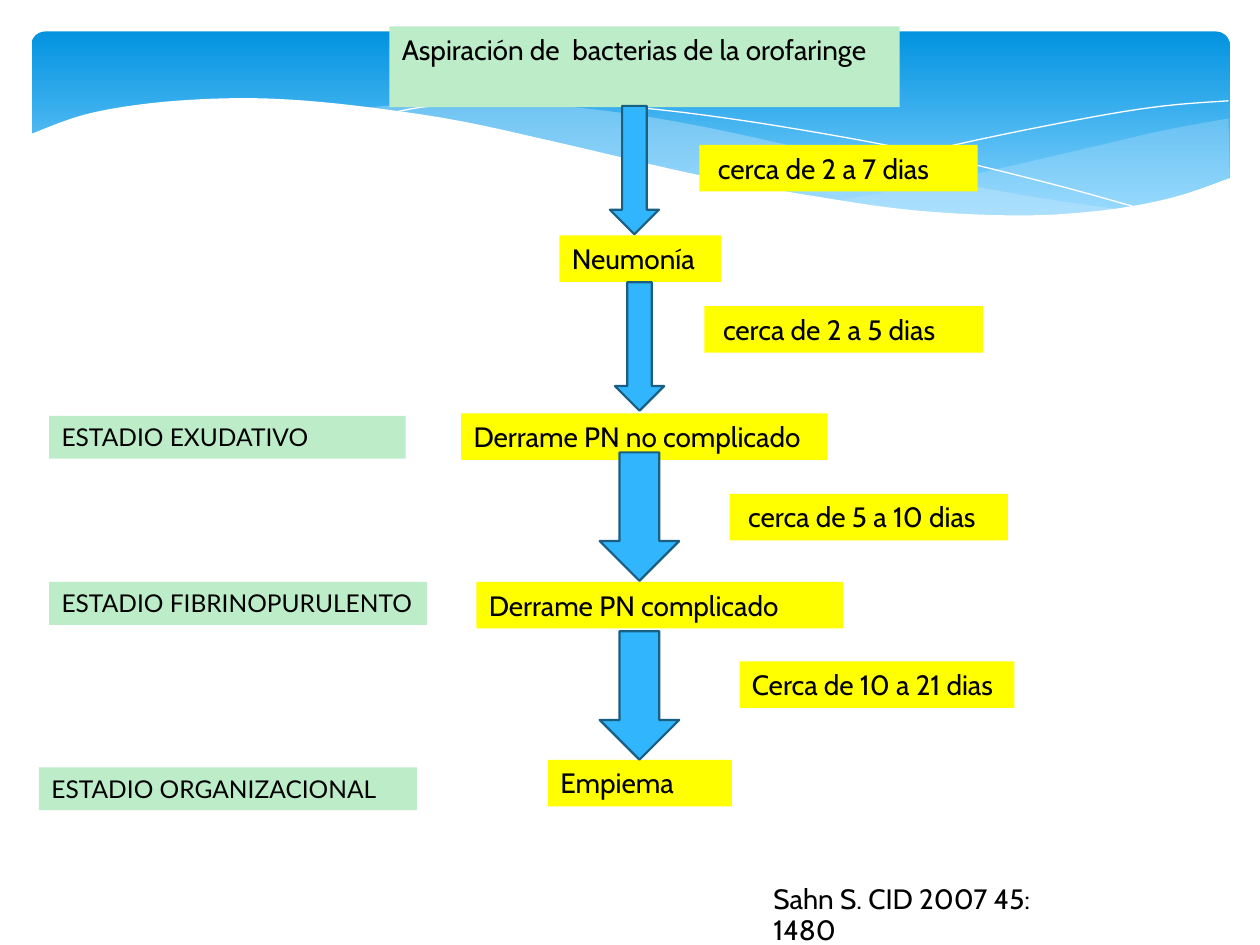
from dataclasses import dataclass

from lxml import etree
from pptx import Presentation
from pptx.dml.color import RGBColor
from pptx.enum.shapes import MSO_SHAPE
from pptx.enum.text import MSO_ANCHOR, PP_ALIGN
from pptx.oxml.ns import qn
from pptx.util import Pt

RECTANGLE = MSO_SHAPE.RECTANGLE
ROUNDED = MSO_SHAPE.ROUNDED_RECTANGLE
DOWN_ARROW = MSO_SHAPE.DOWN_ARROW

BLACK = RGBColor(0x00, 0x00, 0x00)
WHITE = RGBColor(0xFF, 0xFF, 0xFF)
YELLOW = RGBColor(0xFF, 0xFF, 0x00)
MINT = RGBColor(0xBD, 0xEC, 0xC9)
SKY = RGBColor(0x31, 0xB6, 0xFD)
SKY_EDGE = RGBColor(0x19, 0x5F, 0x84)
BANNER_TOP = RGBColor(0x02, 0x93, 0xE0)
BANNER_BOTTOM = RGBColor(0x83, 0xD3, 0xFE)
MIST = RGBColor(0xC6, 0xE7, 0xFC)

Point = tuple[float, float]


@dataclass
class Label:
    text: str
    left: float
    top: float
    width: float
    height: float = 26.6
    fill: RGBColor = YELLOW
    font: str = "Cabin"
    size: float = 16


@dataclass
class Stage(Label):
    height: float = 24.5
    fill: RGBColor = MINT
    font: str = "Lato"
    size: float = 14


@dataclass
class Arrow:
    left: float
    top: float
    width: float
    height: float = 73.4


LABELS = [
    Label("Aspiración de  bacterias de la orofaringe", 222.5, 15.1, 291.6, 46.1, MINT),
    # Course of the disease
    Label("Neumonía", 319.7, 134.6, 92.2),
    Label("Derrame PN no complicado", 263.5, 236.2, 209.5),
    Label("Derrame PN complicado", 272.2, 332.6, 209.5),
    Label("Empiema", 313.2, 434.2, 105.1),
    # Time between steps
    Label(" cerca de 2 a 7 dias", 399.6, 82.8, 159.1),
    Label(" cerca de 2 a 5 dias", 402.5, 175, 159.1),
    Label(" cerca de 5 a 10 dias", 416.9, 282.2, 159.1),
    Label("Cerca de 10 a 21 dias", 422.6, 378, 157),
    # Stages
    Stage("ESTADIO EXUDATIVO", 28.1, 237.6, 203.8),
    Stage("ESTADIO FIBRINOPURULENTO", 28.1, 332.6, 216),
    Stage("ESTADIO ORGANIZACIONAL", 22.3, 438.5, 216),
]
ARROWS = [
    Arrow(348.5, 60.5, 28.1),
    Arrow(351.4, 161.3, 28.1),
    Arrow(342.7, 258.5, 45.4),
    Arrow(342.7, 360.7, 45.4),
]

# Key points of the banner's waves
RIGHT_HILL_TOP = [(702, 67.7), (663.1, 74.9), (619.9, 85), (560.9, 98.6),
                  (508.3, 109.4), (475.9, 115.2)]
RIGHT_HILL_BASE = [(475.9, 115.2), (507.6, 118.8), (545, 122.4), (586.1, 123.8),
                   (627.8, 121.7), (663.1, 115.2), (702.7, 101.5)]
LEFT_HILL_TOP = [(643, 120.2), (581, 110.9), (508.3, 96.5), (452.9, 83.5),
                 (399.6, 72), (352.1, 64.1), (302.4, 59), (259.9, 57.6), (205.9, 61.9)]
LEFT_HILL_BASE = [(205.9, 61.9), (260.6, 69.8), (323.3, 83.5), (381.6, 97.2),
                  (432.7, 108), (489.6, 117.4), (538.6, 122.4), (589, 124.6),
                  (643, 120.2)]
FALLING_LINE = [(222.5, 64.8), (247.7, 60.5), (299.5, 58.3), (352.1, 60.5),
                (400.3, 65.5), (457.9, 74.2), (523.4, 86.4), (598.3, 104.4),
                (653, 119.5)]
RISING_LINE = [(441.4, 108.7), (500.4, 93.6), (558.7, 79.9), (623.5, 67),
               (665.3, 60.5), (702, 57.6)]
WHITE_WAVE = [(703.4, 101.5), (669.6, 113), (630, 120.2), (582.5, 123.1),
              (522.7, 120.2), (466.6, 112.3), (399.6, 100.1), (321.8, 82.1),
              (262.8, 69.1), (210.2, 61.2), (165.6, 56.9), (127.4, 56.2),
              (85.7, 59), (48.2, 65.5), (16.6, 77)]
WAVE_CORNERS = [(16.6, 161.3), (703.4, 161.3)]


def smooth(keys: list[Point], steps: int = 5) -> list[Point]:
    """Catmull-Rom curve through the key points."""
    padded = [keys[0], *keys, keys[-1]]
    curve = [keys[0]]
    for a, b, c, d in zip(padded, padded[1:], padded[2:], padded[3:]):
        for step in range(1, steps + 1):
            t = step / steps
            curve.append(tuple(
                0.5 * (2 * q + (r - p) * t + (2 * p - 5 * q + 4 * r - s) * t ** 2
                       + (3 * q - p - 3 * r + s) * t ** 3)
                for p, q, r, s in zip(a, b, c, d)))
    return curve


def draw_outline(shapes, points: list[Point], closed: bool):
    start, *rest = [(Pt(x), Pt(y)) for x, y in points]
    builder = shapes.build_freeform(*start)
    builder.add_line_segments(rest, close=closed)
    outline = builder.convert_to_shape()
    outline.shadow.inherit = False
    return outline


def draw_area(shapes, points: list[Point], color: RGBColor, opacity: int = 100) -> None:
    area = draw_outline(shapes, points, closed=True)
    area.fill.solid()
    area.fill.fore_color.rgb = color
    area.line.fill.background()
    if opacity < 100:
        tint = area.fill._xPr.find(qn("a:solidFill"))[0]
        etree.SubElement(tint, qn("a:alpha"), val=str(opacity * 1000))


def draw_hairline(shapes, points: list[Point]) -> None:
    hairline = draw_outline(shapes, points, closed=False)
    hairline.fill.background()
    hairline.line.color.rgb = WHITE
    hairline.line.width = Pt(0)


def draw_banner(shapes) -> None:
    banner = shapes.add_shape(ROUNDED, Pt(18), Pt(18), Pt(684.7), Pt(112.3))
    banner.adjustments[0] = 0.07
    banner.shadow.inherit = False
    banner.line.fill.background()
    banner.fill.gradient()
    banner.fill.gradient_angle = 270
    stops = ((0, BANNER_TOP), (0.9, BANNER_BOTTOM))
    for stop, (position, color) in zip(banner.fill.gradient_stops, stops):
        stop.position = position
        stop.color.rgb = color

    draw_area(shapes, smooth(RIGHT_HILL_TOP) + smooth(RIGHT_HILL_BASE), MIST, 29)
    draw_area(shapes, smooth(LEFT_HILL_TOP) + smooth(LEFT_HILL_BASE), MIST, 40)
    for keys in (FALLING_LINE, RISING_LINE):
        draw_hairline(shapes, smooth(keys))
    draw_area(shapes, smooth(WHITE_WAVE) + WAVE_CORNERS, WHITE)


def write_text(frame, text: str, font: str, size: float):
    frame.word_wrap = True
    frame.vertical_anchor = MSO_ANCHOR.TOP
    frame.text = text
    paragraph = frame.paragraphs[0]
    paragraph.alignment = PP_ALIGN.LEFT
    style = paragraph.runs[0].font
    style.name, style.size, style.color.rgb = font, Pt(size), BLACK
    return paragraph


def draw_block(shapes, kind, place: Label | Arrow, color: RGBColor):
    block = shapes.add_shape(kind, Pt(place.left), Pt(place.top),
                             Pt(place.width), Pt(place.height))
    block.shadow.inherit = False
    block.fill.solid()
    block.fill.fore_color.rgb = color
    return block


def main() -> None:
    deck = Presentation()
    deck.slide_width, deck.slide_height = Pt(720), Pt(540)
    shapes = deck.slides.add_slide(deck.slide_layouts[6]).shapes
    draw_banner(shapes)

    # Flow of labels and arrows
    for label in LABELS:
        box = draw_block(shapes, RECTANGLE, label, label.fill)
        box.line.fill.background()
        write_text(box.text_frame, label.text, label.font, label.size)
    for arrow in ARROWS:
        pointer = draw_block(shapes, DOWN_ARROW, arrow, SKY)
        pointer.line.color.rgb = SKY_EDGE
        pointer.line.width = Pt(1.25)

    # Citation
    citation = shapes.add_textbox(Pt(434.9), Pt(502.6), Pt(187.2), Pt(24.5))
    write_text(citation.text_frame, "Sahn S. CID 2007 45: 1480", "Cabin", 16).line_spacing = 0.9
    deck.save("out.pptx")


if __name__ == "__main__":
    main()
